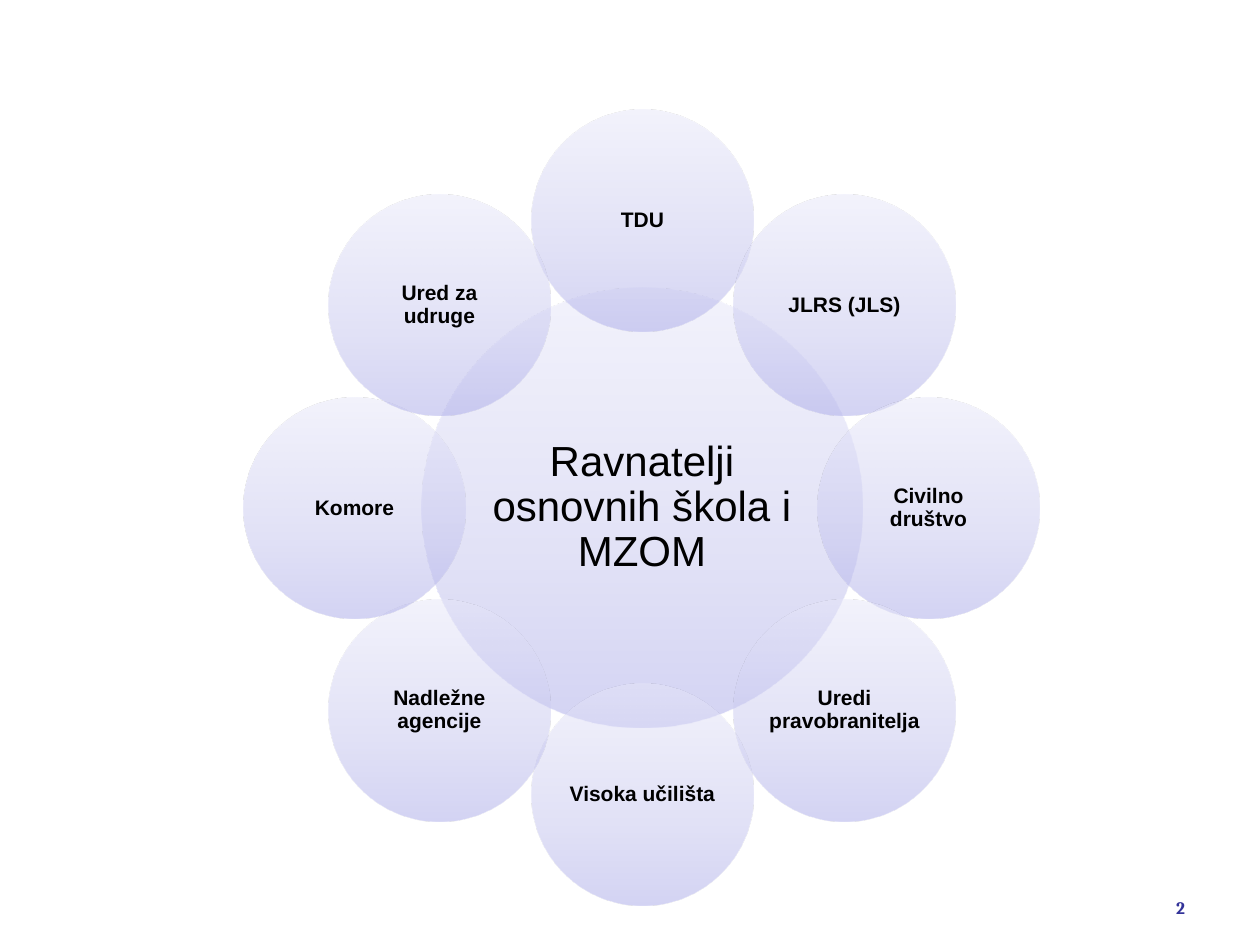
from math import cos, pi, sin

from lxml.etree import SubElement
from pptx import Presentation
from pptx.dml.color import RGBColor
from pptx.enum.shapes import MSO_SHAPE
from pptx.enum.text import MSO_ANCHOR, PP_ALIGN
from pptx.oxml.ns import qn
from pptx.util import Inches, Pt

PX_PER_INCH = 126
BLACK = RGBColor(0x00, 0x00, 0x00)
INDIGO = RGBColor(0x33, 0x33, 0x99)
GRADIENT = (
    (0, RGBColor(0xA9, 0xA9, 0xE9)),
    (35, RGBColor(0xC4, 0xC4, 0xEF)),
    (100, RGBColor(0xE8, 0xE8, 0xFA)),
)
CENTER_X, CENTER_Y = 642, 508
ORBIT_RADIUS = 287
HUB_DIAMETER, PARTNER_DIAMETER = 440, 221
HUB = "Ravnatelji osnovnih škola i MZOM"
PARTNERS = (
    "TDU",
    "JLRS (JLS)",
    "Civilno društvo",
    "Uredi pravobranitelja",
    "Visoka učilišta",
    "Nadležne agencije",
    "Komore",
    "Ured za udruge",
)


def px(length):
    return Inches(length / PX_PER_INCH)


def fill_gradient(shape):
    """Fill with the half-transparent gradient, running from bottom to top."""
    shape.fill.gradient()
    shape.fill.gradient_angle = 90
    stops = shape._element.spPr.find(qn("a:gradFill")).find(qn("a:gsLst"))
    for stop in list(stops):
        stops.remove(stop)
    for percent, color in GRADIENT:
        stop = SubElement(stops, qn("a:gs"), pos=str(percent * 1000))
        color_element = SubElement(stop, qn("a:srgbClr"), val=str(color))
        SubElement(color_element, qn("a:alpha"), val="50000")


def set_text(shape, text, font_name, size, color, bold, alignment, inset):
    frame = shape.text_frame
    frame.text = text
    frame.word_wrap = True
    frame.vertical_anchor = MSO_ANCHOR.MIDDLE
    frame.margin_left = frame.margin_right = px(inset)
    frame.margin_top = frame.margin_bottom = px(inset)
    para = frame.paragraphs[0]
    para.alignment = alignment
    font = para.runs[0].font
    font.name, font.size, font.bold = font_name, Pt(size), bold
    font.color.rgb = color
    return para


def add_circle(group, center_x, center_y, diameter, text, size, bold, inset):
    circle = group.shapes.add_shape(
        MSO_SHAPE.OVAL,
        px(round(center_x - diameter / 2)),
        px(round(center_y - diameter / 2)),
        px(diameter),
        px(diameter),
    )
    circle.shadow.inherit = False
    circle.line.fill.background()
    fill_gradient(circle)
    para = set_text(circle, text, "Arial", size, BLACK, bold, PP_ALIGN.CENTER, inset)
    para.line_spacing = 0.9


def add_partners(group):
    """Place the partners clockwise around the hub, starting at the top."""
    for index, partner in enumerate(PARTNERS):
        angle = 2 * pi * index / len(PARTNERS)
        center_x = CENTER_X + ORBIT_RADIUS * sin(angle)
        center_y = CENTER_Y - ORBIT_RADIUS * cos(angle)
        add_circle(group, center_x, center_y, PARTNER_DIAMETER, partner, 12, True, 2)


def add_page_number(slide, number):
    box = slide.shapes.add_textbox(px(1110), px(890), px(87), px(36))
    set_text(box, number, "Cambria", 10, INDIGO, True, PP_ALIGN.RIGHT, 12)
    box.text_frame.margin_top = box.text_frame.margin_bottom = px(6)


def main():
    deck = Presentation()
    deck.slide_width, deck.slide_height = px(1260), px(945)
    slide = deck.slides.add_slide(deck.slide_layouts[6])
    add_page_number(slide, "2")
    diagram = slide.shapes.add_group_shape()
    add_circle(diagram, CENTER_X, CENTER_Y, HUB_DIAMETER, HUB, 24, False, 4)
    add_partners(diagram)
    deck.save("out.pptx")


if __name__ == "__main__":
    main()
